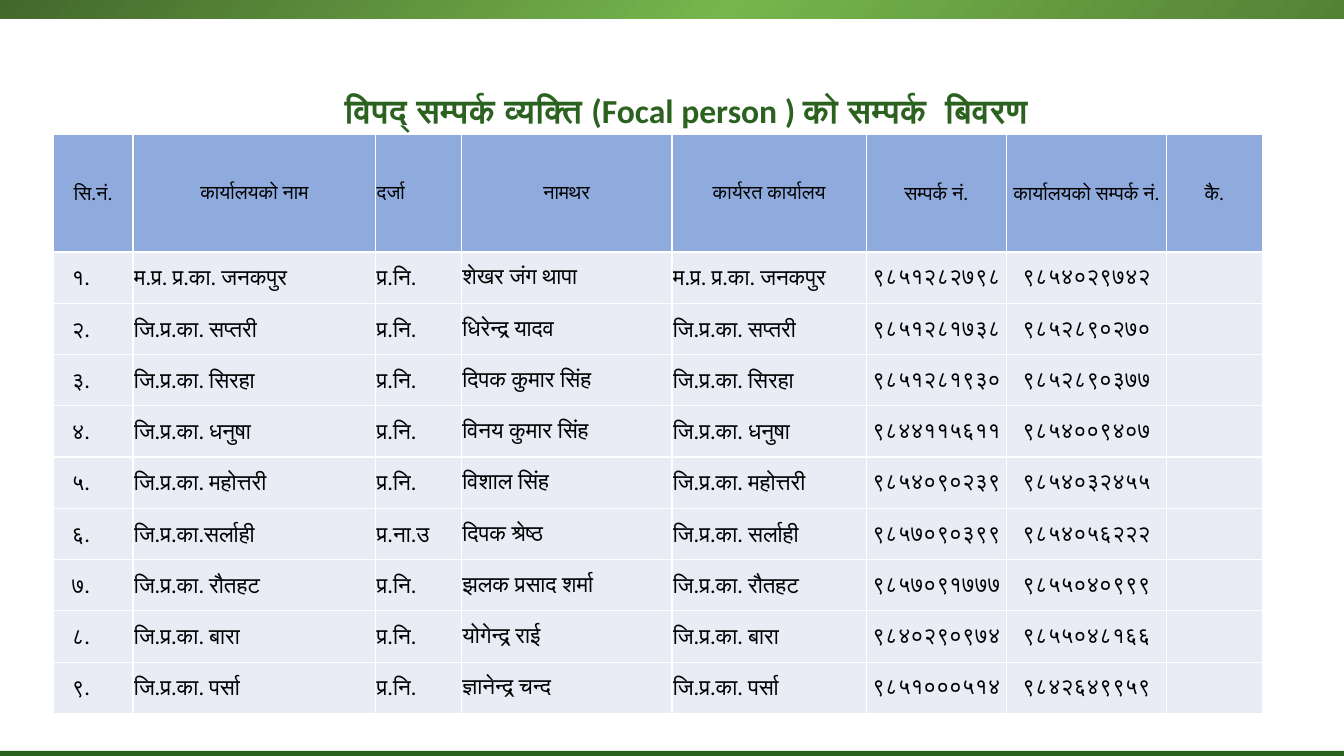
from lxml import etree
from pptx import Presentation
from pptx.dml.color import RGBColor
from pptx.enum.shapes import MSO_SHAPE
from pptx.enum.text import MSO_ANCHOR, PP_ALIGN
from pptx.oxml import parse_xml
from pptx.util import Inches, Pt

RECTANGLE = MSO_SHAPE.RECTANGLE
MIDDLE = MSO_ANCHOR.MIDDLE
LEFT, CENTER = PP_ALIGN.LEFT, PP_ALIGN.CENTER

DARK_GREEN = RGBColor(0x2C, 0x62, 0x20)
BLACK = RGBColor(0x00, 0x00, 0x00)
WHITE = RGBColor(0xFF, 0xFF, 0xFF)
HEADER_BLUE = RGBColor(0x8F, 0xAA, 0xDC)
ROW_BLUE = RGBColor(0xE9, 0xEB, 0xF5)
BAND_STOPS = [
    (0, RGBColor(0x54, 0x82, 0x35)),
    (46, RGBColor(0x76, 0xB5, 0x4C)),
    (100, RGBColor(0x43, 0x68, 0x2B)),
]

NAMESPACE = "http://schemas.openxmlformats.org/drawingml/2006/main"
FONT = "Calibri"
WIDTH, HEIGHT = 13.33, 7.5
TOP_BAND = (-0.01, -0.03, 13.34, 0.21)
BOTTOM_BAND = (-0.01, 7.45, 13.34, 0.05)
TITLE_BOX = (0.81, 0.84, 11.99, 0.65)
TABLE_BOX = (0.53, 1.33, 11.99, 5.75)
HEADER_HEIGHT = 1.17
NUMBER_INDENT = 0.17
CELL_INSET = 0.01

TITLE = "विपद् सम्पर्क व्यक्ति (Focal person ) को सम्पर्क  बिवरण"
COLUMNS = [
    ("सि.नं.", 0.79, CENTER, LEFT),
    ("कार्यालयको नाम", 2.41, CENTER, LEFT),
    ("दर्जा", 0.85, LEFT, LEFT),
    ("नामथर", 2.09, CENTER, LEFT),
    ("कार्यरत कार्यालय", 1.93, CENTER, LEFT),
    ("सम्पर्क नं.", 1.39, CENTER, CENTER),
    ("कार्यालयको सम्पर्क नं.", 1.59, CENTER, CENTER),
    ("कै.", 0.95, CENTER, CENTER),
]
CONTACTS = [
    ("१.", "म.प्र. प्र.का. जनकपुर", "प्र.नि.", "शेखर जंग थापा", "म.प्र. प्र.का. जनकपुर", "९८५१२८२७९८", "९८५४०२९७४२", ""),
    ("२.", "जि.प्र.का. सप्तरी", "प्र.नि.", "धिरेन्द्र यादव", "जि.प्र.का. सप्तरी", "९८५१२८१७३८", "९८५२८९०२७०", ""),
    ("३.", "जि.प्र.का. सिरहा", "प्र.नि.", "दिपक कुमार सिंह", "जि.प्र.का. सिरहा", "९८५१२८१९३०", "९८५२८९०३७७", ""),
    ("४.", "जि.प्र.का. धनुषा", "प्र.नि.", "विनय कुमार सिंह", "जि.प्र.का. धनुषा", "९८४४११५६११", "९८५४००९४०७", ""),
    ("५.", "जि.प्र.का. महोत्तरी", "प्र.नि.", "विशाल सिंह", "जि.प्र.का. महोत्तरी", "९८५४०९०२३९", "९८५४०३२४५५", ""),
    ("६.", "जि.प्र.का.सर्लाही", "प्र.ना.उ", "दिपक श्रेष्ठ", "जि.प्र.का. सर्लाही", "९८५७०९०३९९", "९८५४०५६२२२", ""),
    ("७.", "जि.प्र.का. रौतहट", "प्र.नि.", "झलक प्रसाद शर्मा", "जि.प्र.का. रौतहट", "९८५७०९१७७७", "९८५५०४०९९९", ""),
    ("८.", "जि.प्र.का. बारा", "प्र.नि.", "योगेन्द्र राई", "जि.प्र.का. बारा", "९८४०२९०९७४", "९८५५०४८१६६", ""),
    ("९.", "जि.प्र.का. पर्सा", "प्र.नि.", "ज्ञानेन्द्र चन्द", "जि.प्र.का. पर्सा", "९८५१०००५१४", "९८४२६४९९५९", ""),
]


def write_text(frame, text, size, color=BLACK, bold=False, align=LEFT):
    """Write one formatted paragraph and return it."""
    para = frame.paragraphs[0]
    para.alignment = align
    para.font.size = Pt(size)
    if text:
        span = para.add_run()
        span.text = text
        span.font.name = FONT
        span.font.size = Pt(size)
        span.font.bold = bold
        span.font.color.rgb = color
    return para


def add_band(page, box):
    """Add a plain green band and return it."""
    band = page.shapes.add_shape(RECTANGLE, *map(Inches, box))
    band.shadow.inherit = False
    band.fill.solid()
    band.fill.fore_color.rgb = DARK_GREEN
    band.line.fill.background()
    return band


def apply_radial_gradient(shape, stops):
    """Replace a solid fill with a gradient spreading from the lower right."""
    stop_xml = "".join(
        f'<a:gs pos="{share * 1000}"><a:srgbClr val="{color}"/></a:gs>'
        for share, color in stops
    )
    gradient = parse_xml(
        f'<a:gradFill xmlns:a="{NAMESPACE}" rotWithShape="1">'
        f"<a:gsLst>{stop_xml}</a:gsLst>"
        '<a:path path="circle"><a:fillToRect l="100000" t="100000"/></a:path>'
        "</a:gradFill>"
    )
    properties = shape.element.spPr
    properties.replace(properties.find(f"{{{NAMESPACE}}}solidFill"), gradient)


def add_title(page, box):
    """Add the centred slide heading."""
    frame = page.shapes.add_textbox(*map(Inches, box)).text_frame
    frame.word_wrap = True
    frame.vertical_anchor = MIDDLE
    frame.margin_bottom = Inches(0.25)
    para = write_text(frame, TITLE, 24, color=DARK_GREEN, bold=True, align=CENTER)
    para.line_spacing = 1.15
    para.space_after = Pt(10)


def add_borders(cell, color, width):
    """Draw a line on each side of a cell."""
    properties = cell._tc.get_or_add_tcPr()
    for index, side in enumerate(("lnL", "lnR", "lnT", "lnB")):
        line = etree.Element(f"{{{NAMESPACE}}}{side}", w=str(Pt(width)))
        fill = etree.SubElement(line, f"{{{NAMESPACE}}}solidFill")
        etree.SubElement(fill, f"{{{NAMESPACE}}}srgbClr", val=str(color))
        properties.insert(index, line)


def format_cell(cell, text, size, fill, align, indent=0):
    """Fill, frame and write one table cell."""
    cell.fill.solid()
    cell.fill.fore_color.rgb = fill
    cell.vertical_anchor = MIDDLE
    cell.margin_left = Inches(CELL_INSET + indent)
    cell.margin_right = cell.margin_top = Inches(CELL_INSET)
    cell.margin_bottom = 0
    write_text(cell.text_frame, text, size, align=align)
    add_borders(cell, WHITE, 1)


def add_contact_table(page, box):
    """Add the table of contacts within the given box."""
    row_count = len(CONTACTS) + 1
    frame = page.shapes.add_table(row_count, len(COLUMNS), *map(Inches, box))
    table = frame.table
    table.first_row = table.horz_banding = False
    row_height = (box[3] - HEADER_HEIGHT) / len(CONTACTS)
    for index, row in enumerate(table.rows):
        row.height = Inches(row_height if index else HEADER_HEIGHT)
    total = sum(column[1] for column in COLUMNS)
    for index, (heading, share, heading_align, body_align) in enumerate(COLUMNS):
        table.columns[index].width = Inches(box[2] * share / total)
        format_cell(table.cell(0, index), heading, 14, HEADER_BLUE, heading_align)
        indent = 0 if index else NUMBER_INDENT
        for number, contact in enumerate(CONTACTS, 1):
            format_cell(table.cell(number, index), contact[index], 16,
                        ROW_BLUE, body_align, indent)


def main():
    """Build and save the contact slide."""
    deck = Presentation()
    deck.slide_width, deck.slide_height = Inches(WIDTH), Inches(HEIGHT)
    page = deck.slides.add_slide(deck.slide_layouts[6])
    add_band(page, BOTTOM_BAND)
    apply_radial_gradient(add_band(page, TOP_BAND), BAND_STOPS)
    add_title(page, TITLE_BOX)
    add_contact_table(page, TABLE_BOX)
    deck.save("out.pptx")


if __name__ == "__main__":
    main()
